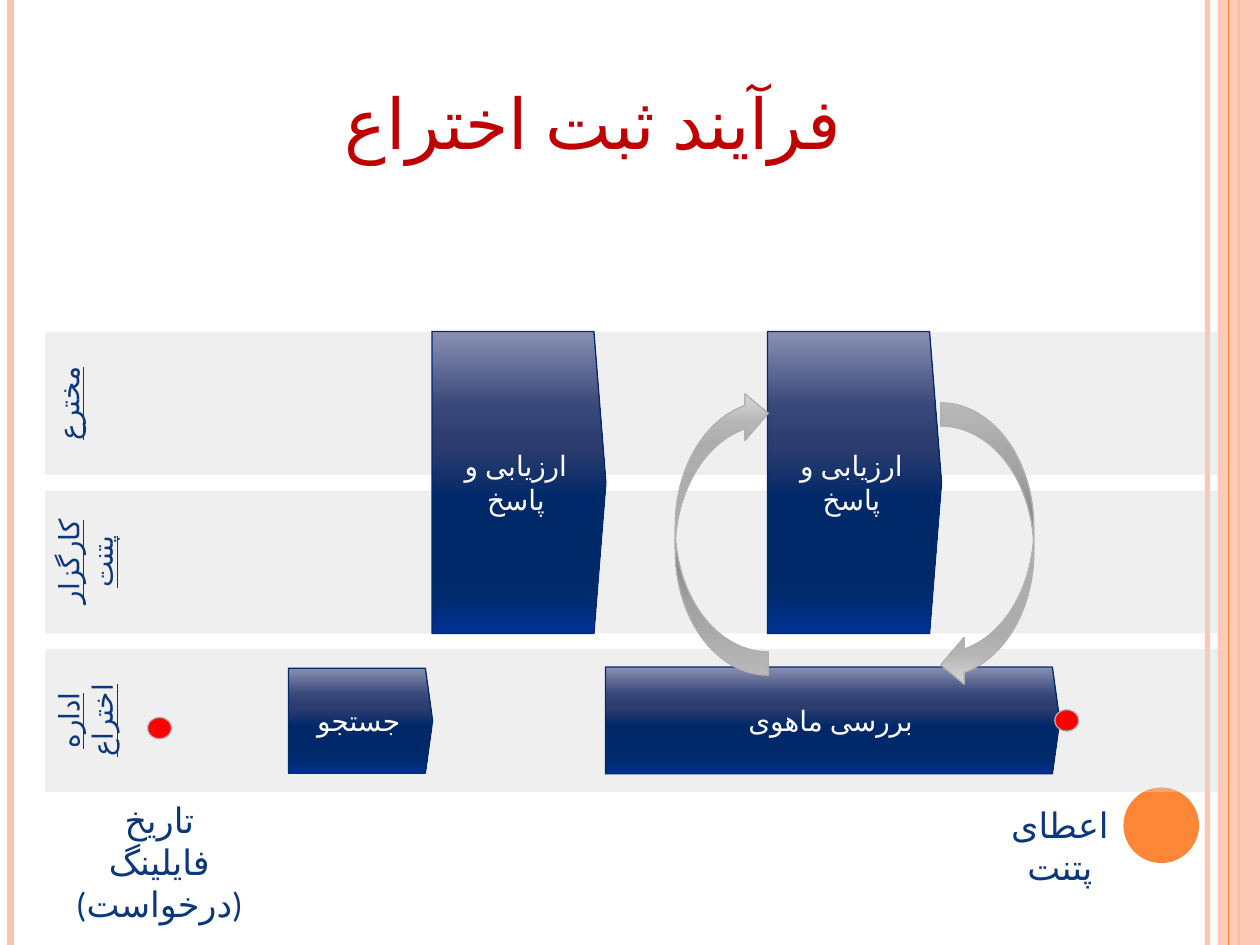
from dataclasses import dataclass

from lxml.etree import SubElement
from pptx import Presentation
from pptx.dml.color import RGBColor
from pptx.enum.lang import MSO_LANGUAGE_ID
from pptx.enum.shapes import MSO_CONNECTOR, MSO_SHAPE
from pptx.enum.text import MSO_ANCHOR, MSO_AUTO_SIZE, PP_ALIGN
from pptx.oxml.ns import qn
from pptx.util import Pt


@dataclass(frozen=True)
class Theme:
    peach: str = "FEC3AE"
    orange: str = "FE8637"
    band: str = "D9D9D9"
    navy: str = "0C377B"
    edge: str = "002A6C"
    gray: str = "B1B1B1"
    red: str = "FF0000"
    title: str = "C00000"
    white: str = "FFFFFF"
    blues: tuple = ("8991B3", "384779", "2D3C6E", "012969", "002969", "002B6E", "003196")
    grays: tuple = ("E7E7E7", "CACACA", "B1B1B1", "ADADAD", "ACACAC", "B5B5B5", "DDDDDD")
    stops: tuple = (0, 25, 38, 55, 80, 88, 100)
    small: int = 16
    mid: int = 20
    large: int = 40
    body: str = "Arial"
    head: str = "Calibri"


THEME = Theme()
WIDE, HIGH = 720, 540


def fade(fill, alpha):
    """Give a solid fill an opacity in percent."""
    for color in fill._xPr.iter(qn("a:srgbClr")):
        SubElement(color, qn("a:alpha"), val=str(alpha * 1000))


def blend(fill, colors):
    """Fill from top to bottom with one colour at each theme stop."""
    fill.gradient()
    fill.gradient_angle = 270
    stops = fill._xPr.find(qn("a:gradFill")).find(qn("a:gsLst"))
    for old in list(stops):
        stops.remove(old)
    for place, color in zip(THEME.stops, colors):
        stop = SubElement(stops, qn("a:gs"), pos=str(place * 1000))
        SubElement(stop, qn("a:srgbClr"), val=color)


def write(shape, text, *, size=THEME.small, font=THEME.body, color=THEME.navy,
          anchor=MSO_ANCHOR.TOP, under=None, turn=None, rtl=False):
    frame = shape.text_frame
    frame.word_wrap = True
    frame.auto_size = MSO_AUTO_SIZE.NONE
    frame.vertical_anchor = anchor
    if turn:
        frame._txBody.bodyPr.set("vert", turn)
    frame.text = text
    for para in frame.paragraphs:
        para.alignment = PP_ALIGN.CENTER
        if rtl:
            para._p.get_or_add_pPr().set("rtl", "1")
        for run in para.runs:
            face = run.font
            face.size, face.name, face.underline = Pt(size), font, under
            face.language_id = MSO_LANGUAGE_ID.FARSI
            face.color.rgb = RGBColor.from_string(color)


def draw(slide, kind, box, fill, edge=None, alpha=None):
    """Add a preset shape; a tuple of colours as fill makes a gradient."""
    shape = slide.shapes.add_shape(kind, *map(Pt, box))
    shape.shadow.inherit = False
    if isinstance(fill, tuple):
        blend(shape.fill, fill)
    else:
        shape.fill.solid()
        shape.fill.fore_color.rgb = RGBColor.from_string(fill)
    if alpha:
        fade(shape.fill, alpha)
    if edge:
        shape.line.color.rgb = RGBColor.from_string(edge)
        shape.line.width = Pt(0.75)
    else:
        shape.line.fill.background()
    return shape


def stripe(slide, left, color, width, alpha=None):
    line = slide.shapes.add_connector(
        MSO_CONNECTOR.STRAIGHT, Pt(left), Pt(0), Pt(left), Pt(HIGH))
    line.line.color.rgb = RGBColor.from_string(color)
    line.line.width = Pt(width)
    if alpha:
        fade(line.line.fill, alpha)
    SubElement(line._element.spPr, qn("a:effectLst"))


def frame(slide):
    """Draw the stripes and the disc at the slide's edges."""
    stripe(slide, 690, THEME.peach, 3, 93)
    stripe(slide, 6, THEME.peach, 4.5)
    stripe(slide, 708, THEME.orange, 1.5)
    draw(slide, MSO_SHAPE.RECTANGLE, (696, 0, 24, HIGH), THEME.peach, alpha=87)
    stripe(slide, 702, THEME.orange, 0.75)
    draw(slide, MSO_SHAPE.OVAL, (642, 450, 43.2, 43.2), THEME.orange)


def lane(slide, row, text):
    band = draw(slide, MSO_SHAPE.RECTANGLE, (25.8, 189.6 + 90.6 * row, 670.4, 81.8),
                THEME.band, alpha=40)
    write(band, text, under=True, turn="vert270")


def step(slide, box, text):
    plate = draw(slide, MSO_SHAPE.PENTAGON, box, THEME.blues, THEME.edge)
    plate.adjustments[0] = 0.069
    write(plate, text, color=THEME.white, anchor=MSO_ANCHOR.MIDDLE)


def dot(slide, left, top):
    draw(slide, MSO_SHAPE.OVAL, (left, top, 13.6, 12.2), THEME.red, THEME.gray)


def arrow(slide, left, top, angle=0):
    shape = draw(slide, MSO_SHAPE.CURVED_LEFT_ARROW, (left, top, 53.2, 163),
                 THEME.grays, THEME.gray)
    shape.rotation = angle


def label(slide, box, text):
    write(slide.shapes.add_textbox(*map(Pt, box)), text, size=THEME.mid, font=THEME.head)


def main():
    deck = Presentation()
    deck.slide_width, deck.slide_height = Pt(WIDE), Pt(HIGH)
    slide = deck.slides.add_slide(deck.slide_layouts[5])

    title = slide.shapes.title
    title.left, title.top, title.width, title.height = map(Pt, (12, 42, 654, 55.4))
    write(title, "فرآیند ثبت اختراع", size=THEME.large, font=THEME.head,
          color=THEME.title, rtl=True)

    frame(slide)
    for row, text in enumerate(("مخترع", "کارگزار پتنت", "اداره اختراع")):
        lane(slide, row, text)

    step(slide, (164.8, 381.8, 82.4, 60), "جستجو")
    dot(slide, 84.4, 410)
    step(slide, (346, 381.2, 259.6, 61), "بررسی ماهوی")
    for left in (246.8, 438.6):
        step(slide, (left, 189.4, 99.4, 172.6), "ارزیابی و پاسخ")

    arrow(slide, 537.6, 230.2)
    arrow(slide, 385.8, 222.8, 180)
    dot(slide, 602.8, 405.6)
    label(slide, (35, 453, 112, 55.4), "تاریخ فایلینگ\n(درخواست)")
    label(slide, (556.8, 455.8, 97.6, 31.6), "اعطای پتنت")
    deck.save("out.pptx")


if __name__ == "__main__":
    main()
